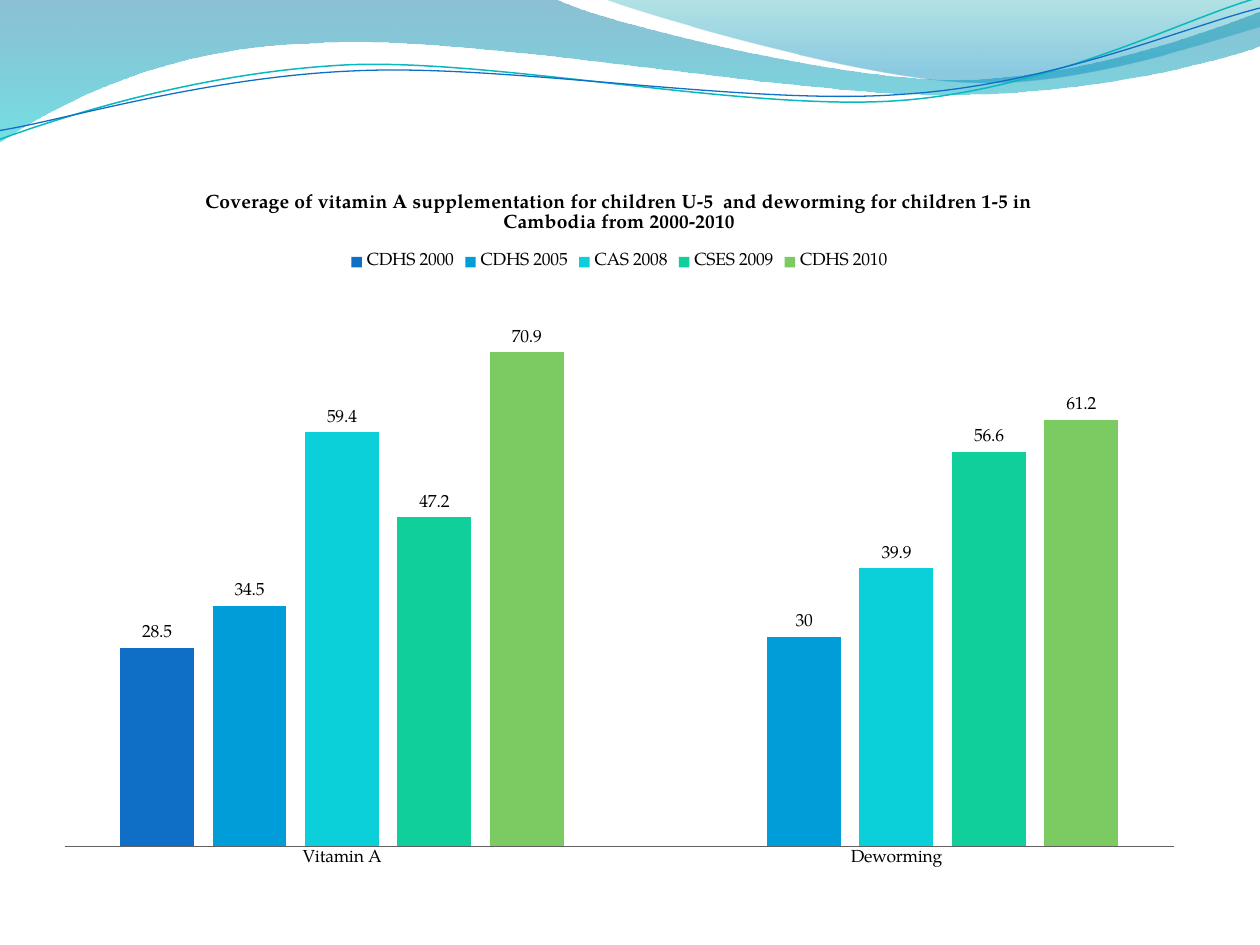
from lxml.etree import SubElement
from pptx import Presentation
from pptx.chart.data import CategoryChartData
from pptx.dml.color import RGBColor
from pptx.enum.chart import (XL_CHART_TYPE, XL_LABEL_POSITION,
                             XL_LEGEND_POSITION, XL_TICK_MARK)
from pptx.oxml import parse_xml
from pptx.oxml.ns import nsdecls, qn
from pptx.util import Inches, Pt

FONT = "TeX Gyre Pagella"
BLACK = RGBColor(0x00, 0x00, 0x00)
AXIS_GRAY = RGBColor(0x60, 0x60, 0x60)
DEEP_BLUE = RGBColor(0x00, 0x74, 0xA1)
AQUA = RGBColor(0x00, 0xC6, 0xCF)
TEAL = RGBColor(0x00, 0xA1, 0xA9)
MID_BLUE = RGBColor(0x00, 0x8B, 0xBF)
LINE_TEAL = RGBColor(0x0A, 0xB8, 0xBF)
BLUE = RGBColor(0x0F, 0x6F, 0xC6)
SKY = RGBColor(0x00, 0x9D, 0xD9)
CYAN = RGBColor(0x0B, 0xD0, 0xD9)
GREEN = RGBColor(0x10, 0xCF, 0x9B)
LIME = RGBColor(0x7C, 0xCA, 0x62)


def add_wave(shapes, start, segments, close):
    """Draw a freeform; a segment is one point (line) or three (Bezier curve)."""
    points = [(Inches(x), Inches(y)) for seg in segments for x, y in seg]
    builder = shapes.build_freeform(Inches(start[0]), Inches(start[1]))
    builder.add_line_segments(points, close=close)
    sp = builder.convert_to_shape()
    sp.shadow.inherit = False
    steps = iter(list(sp._element.iter(qn("a:lnTo"))))
    for seg in segments:
        group = [next(steps) for _ in seg]
        if len(group) == 3:
            first, *others = group
            curve = parse_xml(f'<a:cubicBezTo {nsdecls("a")}/>')
            first.addprevious(curve)
            for step in group:
                curve.append(step[0])
                step.getparent().remove(step)
    return sp


def write_text(tf, text, *, size, color=BLACK, bold=False):
    r = tf.paragraphs[0].add_run()
    r.text = text
    r.font.name = FONT
    r.font.size = Pt(size)
    r.font.bold = bold
    r.font.color.rgb = color


prs = Presentation()
prs.slide_width, prs.slide_height = Inches(10), Inches(7.5)
s = prs.slides.add_slide(prs.slide_layouts[6])

# Translucent waves: start, segments, gradient stops (position, colour, alpha %)
waves = [
    ((0, 0),
     [[(4.4, -0.01)],
      [(4.76, 0.17), (6.64, 0.63), (7.58, 0.63)],
      [(8.53, 0.63), (9.58, 0.26), (10, 0.09)],
      [(10.01, 0.36)],
      [(9.83, 0.44), (8.7, 0.76), (7.46, 0.75)],
      [(6.22, 0.75), (3.82, 0.28), (2.57, 0.34)],
      [(1.29, 0.36), (0.46, 0.83), (-0.01, 1.13)]],
     [(0, DEEP_BLUE, 45), (1, AQUA, 55)]),
    ((4.79, -0.01),
     [[(5.09, 0.11), (6.82, 0.62), (7.69, 0.65)],
      [(8.56, 0.69), (9.61, 0.32), (10, 0.21)],
      [(10, 0)]],
     [(0, TEAL, 30), (0.8, MID_BLUE, 45)]),
]
for start, segments, stops in waves:
    sp = add_wave(s.shapes, start, segments, close=True)
    sp.line.fill.background()
    sp.fill.gradient()
    sp.fill.gradient_angle = 270
    for stop, (position, color, _) in zip(sp.fill.gradient_stops, stops):
        stop.position = position
        stop.color.rgb = color
    for clr, (_, _, alpha) in zip(sp._element.spPr.iter(qn("a:srgbClr")), stops):
        SubElement(clr, qn("a:alpha"), val=str(alpha * 1000))

# Thin wave lines, tilted as a whole
wave_lines = [
    ((-0.02, 0.87),
     [[(0.47, 0.72), (1.58, 0.41), (2.78, 0.41)],
      [(3.96, 0.42), (5.91, 0.93), (7.12, 0.9)],
      [(8.32, 0.87), (9.4, 0.36), (10, 0.22)]], LINE_TEAL, 0.85),
    ((-0.02, 0.8),
     [[(0.46, 0.75), (1.64, 0.45), (2.83, 0.46)],
      [(4.03, 0.46), (5.96, 0.89), (7.16, 0.85)],
      [(8.35, 0.83), (9.42, 0.42), (10.02, 0.3)]], BLUE, 0.75),
]
for start, segments, color, width in wave_lines:
    sp = add_wave(s.shapes, start, segments, close=False)
    sp.rotation = 357.3
    sp.fill.background()
    sp.line.color.rgb = color
    sp.line.width = Pt(width)

# Coverage chart
surveys = [
    ("CDHS 2000", (28.5, None), BLUE),
    ("CDHS 2005", (34.5, 30), SKY),
    ("CAS 2008", (59.4, 39.9), CYAN),
    ("CSES 2009", (47.2, 56.6), GREEN),
    ("CDHS 2010", (70.9, 61.2), LIME),
]
data = CategoryChartData()
data.categories = ["Vitamin A", "Deworming"]
for name, values, _ in surveys:
    data.add_series(name, values)
chart = s.shapes.add_chart(XL_CHART_TYPE.COLUMN_CLUSTERED, Inches(0.33), Inches(1.33),
                           Inches(9.17), Inches(5.67), data).chart
chart.font.name = FONT
chart.font.size = Pt(10)
chart.font.color.rgb = BLACK

chart.has_title = True
write_text(chart.chart_title.text_frame,
           "Coverage of vitamin A supplementation for children U-5  and deworming "
           "for children 1-5 in Cambodia from 2000-2010", size=11, bold=True)
chart.chart_title.include_in_layout = False
chart.has_legend = True
chart.legend.position = XL_LEGEND_POSITION.TOP
chart.legend.include_in_layout = False

chart.value_axis.visible = False
chart.value_axis.has_major_gridlines = False
chart.value_axis.minimum_scale = 0
chart.value_axis.maximum_scale = 80
chart.category_axis.major_tick_mark = XL_TICK_MARK.NONE
chart.category_axis.format.line.color.rgb = AXIS_GRAY
chart.category_axis.format.line.width = Pt(0.5)

plot = chart.plots[0]
plot.gap_width = 150
plot.overlap = -25
plot.vary_by_categories = False
plot.has_data_labels = True
labels = plot.data_labels
labels.show_value = True
labels.position = XL_LABEL_POSITION.OUTSIDE_END
labels.number_format = "General"
labels.number_format_is_linked = False
for series, (_, _, color) in zip(plot.series, surveys):
    series.format.fill.solid()
    series.format.fill.fore_color.rgb = color

# Plot area as fractions of the chart
plot_area = chart._chartSpace.chart.plotArea
for old in plot_area.findall(qn("c:layout")):
    plot_area.remove(old)
plot_area.insert(0, parse_xml(
    f'<c:layout {nsdecls("c")}><c:manualLayout><c:layoutTarget val="inner"/>'
    '<c:xMode val="edge"/><c:yMode val="edge"/><c:x val="0.02"/><c:y val="0.17"/>'
    '<c:w val="0.96"/><c:h val="0.78"/></c:manualLayout></c:layout>'))

prs.save("out.pptx")
